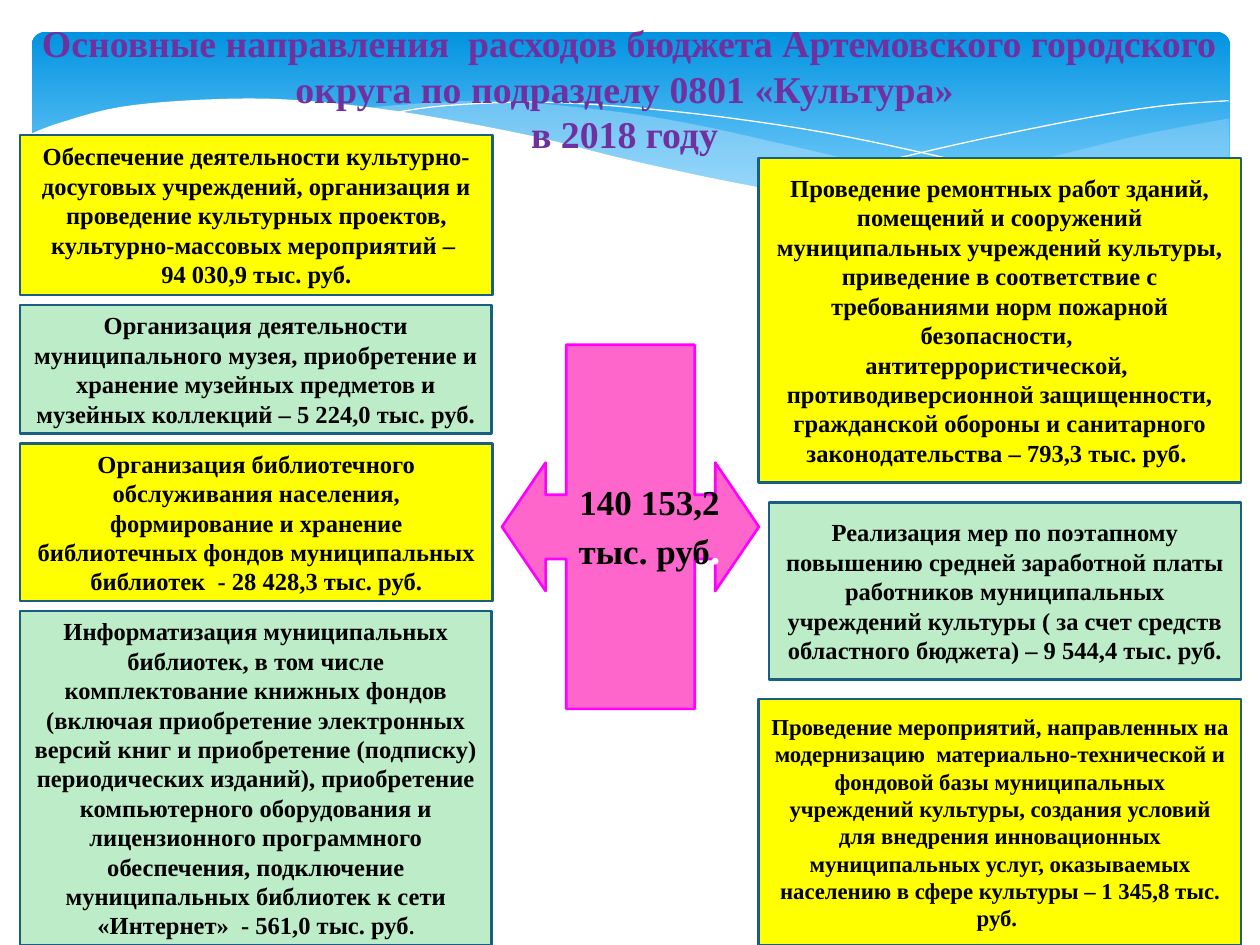
from dataclasses import dataclass
from typing import Optional

from pptx import Presentation
from pptx.dml.color import RGBColor
from pptx.enum.shapes import MSO_SHAPE as Preset
from pptx.enum.text import MSO_ANCHOR as Anchor, MSO_AUTO_SIZE as AutoSize, PP_ALIGN as Align
from pptx.oxml.ns import qn
from pptx.util import Cm, Pt
from lxml.etree import SubElement

Point = tuple[float, float]


@dataclass(frozen=True)
class Theme:
    font: str = "Times New Roman"
    title: str = "7030A0"
    text: str = "000000"
    white: str = "FFFFFF"
    sky_top: str = "0293E0"
    sky_bottom: str = "83D3FE"
    ribbon: str = "C6E7FC"
    yellow: str = "FFFF00"
    green: str = "BDECC9"
    border: str = "195F84"
    arrow: str = "FF66CC"
    arrow_border: str = "FF00FF"
    title_size: float = 21.6
    total_size: float = 20
    total_dot_size: float = 24
    box_size: float = 14
    small_size: float = 13
    dot_size: float = 12


THEME = Theme()


@dataclass(frozen=True)
class Run:
    text: str
    size: float = THEME.box_size
    color: str = THEME.text


@dataclass(frozen=True)
class Box:
    height: float
    width: float
    fill: str
    paragraphs: list[list[Run]]


@dataclass(frozen=True)
class Wave:
    curves: list[list[Point]]
    fill: Optional[str] = None
    alpha: int = 100
    line: Optional[str] = None


WAVES = [
    Wave([[(24.77, 2.39), (23.01, 2.72), (21.13, 3.18), (19.13, 3.63), (16.79, 4.06)],
          [(16.79, 4.06), (18.24, 4.24), (19.84, 4.37), (21.21, 4.37), (22.38, 4.24),
           (23.57, 4.01), (24.79, 3.58)]], THEME.ribbon, 29),
    Wave([[(22.68, 4.24), (20.5, 3.91), (17.93, 3.4), (15.98, 2.95), (13.74, 2.46),
           (11.81, 2.18), (9.65, 2.03), (7.26, 2.18)],
          [(7.26, 2.18), (9.19, 2.46), (11.4, 2.95), (13.46, 3.43), (15.7, 3.89),
           (18.01, 4.22), (20.22, 4.39), (22.68, 4.24)]], THEME.ribbon, 40),
    Wave([[(7.85, 2.29), (8.97, 2.13), (11, 2.06), (13.54, 2.24), (16.15, 2.59),
           (18.47, 3.05), (21.11, 3.68), (23.04, 4.22)]], line=THEME.white),
    Wave([[(15.57, 3.84), (17.65, 3.3), (19.71, 2.82), (22, 2.36), (23.47, 2.13),
           (24.77, 2.03)]], line=THEME.white),
    Wave([[(24.82, 3.58), (23.37, 4.04), (21.92, 4.29), (20.14, 4.34), (17.98, 4.19),
           (15.32, 3.78), (12.78, 3.25), (10.62, 2.72), (8, 2.24), (5.84, 2.01),
           (4.09, 2.01), (2.41, 2.16), (1.17, 2.49), (0.58, 2.72)],
          [(0.58, 5.69), (24.82, 5.69)]], THEME.white),
]

LEFT_BOXES = [
    Box(3.23, 9.52, THEME.yellow, [
        [Run("Обеспечение деятельности культурно-досуговых учреждений, организация и проведение "
             "культурных проектов, культурно-массовых мероприятий – ")],
        [Run("94 030,9 тыс. руб.")]]),
    Box(2.59, 9.5, THEME.green, [
        [Run("Организация деятельности муниципального музея, приобретение и хранение музейных "
             "предметов и музейных коллекций – 5 224,0 тыс. руб.")]]),
    Box(3.18, 9.52, THEME.yellow, [
        [Run("Организация библиотечного обслуживания населения, формирование и хранение "
             "библиотечных фондов муниципальных библиотек  - 28 428,3 тыс. руб.")]]),
    Box(6.73, 9.5, THEME.green, [
        [Run("Информатизация муниципальных библиотек, в том числе комплектование книжных фондов "
             "(включая приобретение электронных версий книг и приобретение (подписку) "
             "периодических изданий), приобретение компьютерного оборудования и лицензионного "
             "программного обеспечения, подключение муниципальных библиотек к сети "
             "«Интернет»  - 561,0 тыс. руб"),
         Run(".", THEME.dot_size)]]),
]

RIGHT_BOXES = [
    Box(6.55, 9.73, THEME.yellow, [
        [Run("Проведение ремонтных работ зданий, помещений и сооружений муниципальных учреждений "
             "культуры, приведение в соответствие с требованиями норм пожарной безопасности, ")],
        [Run("антитеррористической, ")],
        [Run("противодиверсионной защищенности, гражданской обороны и санитарного "
             "законодательства – 793,3 тыс. руб. ")]]),
    Box(3.57, 9.52, THEME.green, [
        [Run("Реализация мер по поэтапному повышению средней заработной платы работников "
             "муниципальных учреждений культуры ( за счет средств областного бюджета) – "
             "9 544,4 тыс. руб.")]]),
    Box(4.95, 9.73, THEME.yellow, [
        [Run("Проведение мероприятий, направленных на модернизацию  материально-технической и "
             "фондовой базы муниципальных учреждений культуры, создания условий для внедрения "
             "инновационных муниципальных услуг, оказываемых населению в сфере культуры – "
             "1 345,8 тыс. руб. ", THEME.small_size)]]),
]

TOTAL = [[Run("140 153,2", THEME.total_size)],
         [Run("тыс. руб", THEME.total_size), Run(".", THEME.total_dot_size, THEME.white)]]
TITLE = [[Run("Основные направления  расходов бюджета Артемовского городского округа "
              "по подразделу 0801 «Культура» \vв 2018 году ", THEME.title_size, THEME.title)]]


def apply(target, values: dict) -> None:
    for name, value in values.items():
        setattr(target, name, value)


def paint(shape, fill: Optional[str], line: Optional[str] = None, width: float = 0) -> None:
    shape.shadow.inherit = False
    for part, color in ((shape.fill, fill), (shape.line.fill, line)):
        if color is None:
            part.background()
        else:
            part.solid()
            part.fore_color.rgb = RGBColor.from_string(color)
    if line:
        shape.line.width = Pt(width)


def write(shape, paragraphs: list[list[Run]], wrap: bool = True) -> None:
    frame = shape.text_frame
    apply(frame, {"word_wrap": wrap, "auto_size": AutoSize.NONE, "vertical_anchor": Anchor.MIDDLE})
    for index, runs in enumerate(paragraphs):
        paragraph = frame.add_paragraph() if index else frame.paragraphs[0]
        paragraph.alignment = Align.CENTER
        for item in runs:
            for position, text in enumerate(item.text.split("\v")):
                if position:
                    paragraph.add_line_break()
                run = paragraph.add_run()
                run.text = text
                apply(run.font, {"name": THEME.font, "size": Pt(item.size), "bold": True})
                run.font.color.rgb = RGBColor.from_string(item.color)


def smooth(points: list[Point], steps: int = 5) -> list[Point]:
    """Return points along a Catmull-Rom curve through the given points."""
    padded = [points[0], *points, points[-1]]
    curve = [points[0]]
    for a, b, c, d in zip(padded, padded[1:], padded[2:], padded[3:]):
        for step in range(1, steps + 1):
            t = step / steps
            curve.append(tuple(
                (2 * q + (r - p) * t + (2 * p - 5 * q + 4 * r - s) * t ** 2
                 + (3 * q - p - 3 * r + s) * t ** 3) / 2
                for p, q, r, s in zip(a, b, c, d)))
    return curve


def draw_wave(shapes, wave: Wave) -> None:
    points = [(Cm(x), Cm(y)) for curve in wave.curves for x, y in smooth(curve)]
    builder = shapes.build_freeform(*points[0])
    builder.add_line_segments(points[1:], close=wave.fill is not None)
    shape = builder.convert_to_shape()
    paint(shape, wave.fill, wave.line)
    if wave.alpha < 100:
        color = shape.fill._xPr.find(qn("a:solidFill"))[0]
        SubElement(color, qn("a:alpha"), val=str(wave.alpha * 1000))


def draw_sky(shapes) -> None:
    sky = shapes.add_shape(Preset.ROUNDED_RECTANGLE, Cm(0.64), Cm(0.64), Cm(24.16), Cm(3.96))
    sky.adjustments[0] = 0.07
    paint(sky, None)
    sky.fill.gradient()
    sky.fill.gradient_angle = 270
    stops = zip(sky.fill.gradient_stops, (0, 0.9), (THEME.sky_top, THEME.sky_bottom))
    for stop, position, color in stops:
        stop.position = position
        stop.color.rgb = RGBColor.from_string(color)


def draw_column(shapes, boxes: list[Box], top: float, gap: float,
                left: float = 0, right: float = 0) -> None:
    for box in boxes:
        x = right - box.width if right else left
        shape = shapes.add_shape(Preset.RECTANGLE, Cm(x), Cm(top), Cm(box.width), Cm(box.height))
        paint(shape, box.fill, THEME.border, 1.25)
        write(shape, box.paragraphs)
        top += box.height + gap


def draw_total(shapes) -> None:
    arrow = shapes.add_shape(Preset.UP_DOWN_ARROW_CALLOUT, Cm(9.04), Cm(8.03), Cm(7.34), Cm(5.18))
    arrow.rotation = 270
    for index, value in enumerate((0.25, 0.25, 0.17, 0.5)):
        arrow.adjustments[index] = value
    paint(arrow, THEME.arrow, THEME.arrow_border, 1.5)
    write(arrow, TOTAL, wrap=False)
    arrow.text_frame._txBody.bodyPr.set("vert", "eaVert")


def main() -> None:
    presentation = Presentation()
    apply(presentation, {"slide_width": Cm(25.4), "slide_height": Cm(19.05)})
    slide = presentation.slides.add_slide(presentation.slide_layouts[5])
    shapes = slide.shapes
    draw_sky(shapes)
    for wave in WAVES:
        draw_wave(shapes, wave)
    title = shapes.title
    apply(title, {"left": Cm(0.58), "top": Cm(0.53), "width": Cm(24.21), "height": Cm(2.49)})
    write(title, TITLE)
    shapes._spTree.append(title._element)
    draw_total(shapes)
    draw_column(shapes, LEFT_BOXES, top=2.72, gap=0.2, left=0.41)
    draw_column(shapes, RIGHT_BOXES, top=3.18, gap=0.4, right=25.02)
    presentation.save("out.pptx")


if __name__ == "__main__":
    main()
